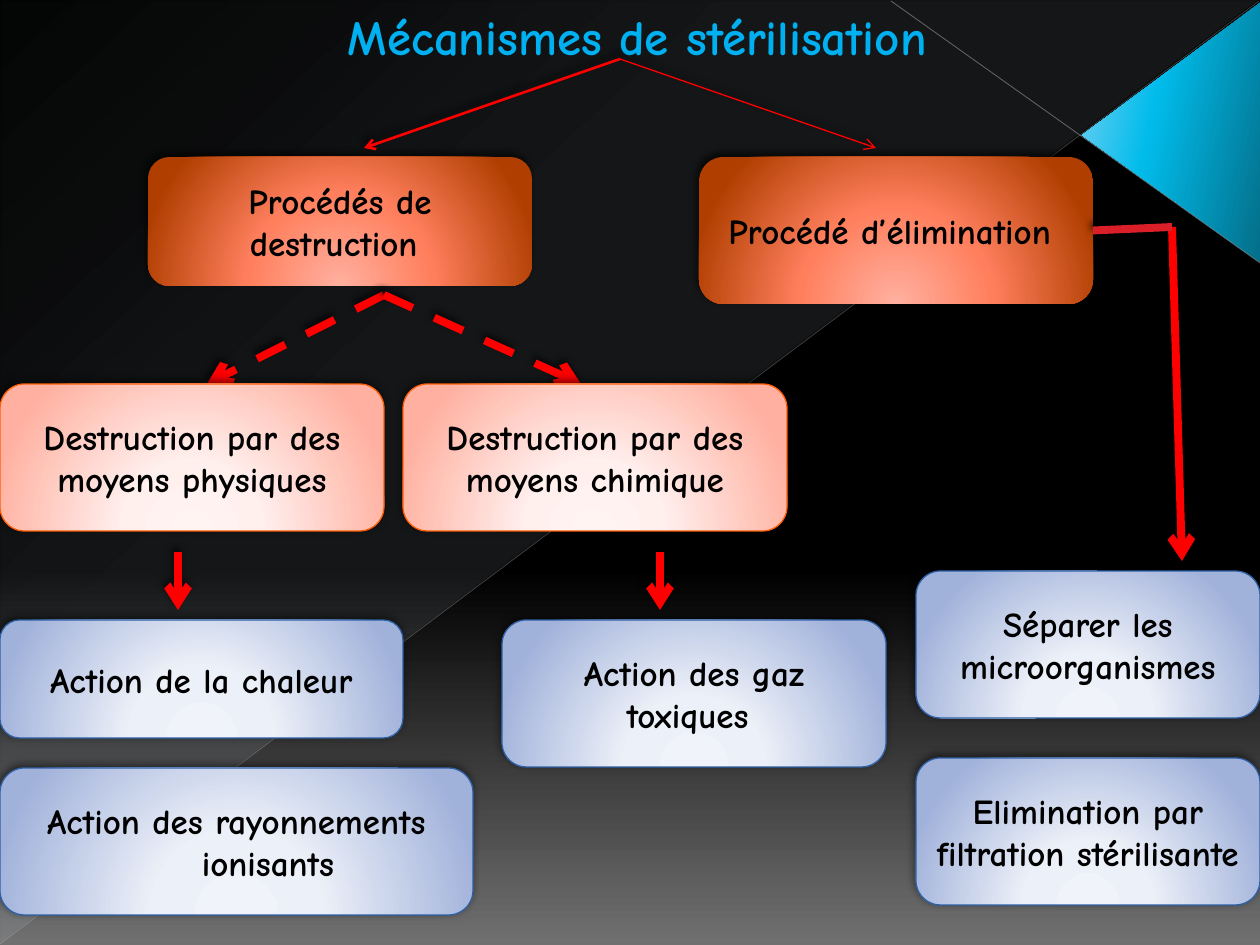
from lxml.etree import SubElement
from pptx import Presentation
from pptx.dml.color import RGBColor
from pptx.enum.dml import MSO_LINE_DASH_STYLE as Dash
from pptx.enum.shapes import MSO_CONNECTOR as Link, MSO_SHAPE as Preset
from pptx.enum.text import MSO_ANCHOR as Anchor, MSO_AUTO_SIZE as AutoSize, PP_ALIGN as Align
from pptx.oxml.ns import qn
from pptx.util import Emu, Pt

PX_PER_INCH = 126
RED = "FF0000"

# Each theme: gradient stops, outline colour, shadow (opacity, blur, distance)
ORANGE = ([(0, "FFB0A0"), (46, "FF7F5D"), (100, "B03E00")], None, (60, 4, 3))
PINK = ([(0, "FFF4F2"), (34, "FFEFED"), (100, "FFB0A0")], "FF5E07", (50, 5, 2))
BLUE = ([(0, "F1F3FB"), (34, "ECF0F8"), (100, "A0B1DA")], "2F61A7", (50, 5, 2))


def px(value):
    return Emu(round(value * 914400 / PX_PER_INCH))


def rgb(hex_code):
    return RGBColor.from_string(hex_code)


def add_node(parent, tag, **attributes):
    return SubElement(parent, qn(tag), {key: str(value) for key, value in attributes.items()})


def add_color(parent, hex_code, opacity=100):
    color = add_node(parent, "a:srgbClr", val=hex_code)
    if opacity < 100:
        add_node(color, "a:alpha", val=opacity * 1000)


def set_gradient(fill, properties, stops, angle=None):
    """Fill with (position, colour[, opacity]) stops: linear at an angle, else radial."""
    fill.solid()
    solid = properties.find(qn("a:solidFill"))
    gradient = add_node(properties, "a:gradFill", rotWithShape=1)
    properties.replace(solid, gradient)
    stop_list = add_node(gradient, "a:gsLst")
    for position, *color in stops:
        add_color(add_node(stop_list, "a:gs", pos=position * 1000), *color)
    if angle is None:
        circle = add_node(gradient, "a:path", path="circle")
        add_node(circle, "a:fillToRect", l=50000, t=155000, r=50000, b=-55000)
    else:
        add_node(gradient, "a:lin", ang=angle * 60000, scaled=0)


def set_shadow(item, shadow=None):
    effects = add_node(item.element.spPr, "a:effectLst")
    if shadow:
        opacity, blur, distance = shadow
        outer = add_node(effects, "a:outerShdw", blurRad=Pt(blur), dist=Pt(distance),
                         dir=245 * 60000, rotWithShape=0)
        add_color(outer, "000000", opacity)


def write(shape, text, size=20, color="000000", align=Align.CENTER,
          anchor=Anchor.MIDDLE, wrap=True, hanging=0):
    frame = shape.text_frame
    frame.word_wrap = wrap
    frame.vertical_anchor = anchor
    paragraph = frame.paragraphs[0]
    paragraph.alignment = align
    if hanging:
        properties = paragraph._p.get_or_add_pPr()
        properties.set("marL", str(px(hanging)))
        properties.set("indent", str(-px(hanging)))
    run = paragraph.add_run()
    run.text = text
    run.font.name = "Comic Neue"
    run.font.size = Pt(size)
    run.font.bold = True
    run.font.color.rgb = rgb(color)


def add_box(slide, theme, text, left, top, width, height=147, hanging=0):
    stops, outline, shadow = theme
    box = slide.shapes.add_shape(Preset.ROUNDED_RECTANGLE, *map(px, (left, top, width, height)))
    set_gradient(box.fill, box.element.spPr, stops)
    if outline:
        box.line.color.rgb = rgb(outline)
        box.line.width = Pt(0.75)
    else:
        box.line.fill.background()
    set_shadow(box, shadow)
    write(box, text, hanging=hanging)
    return box


def add_line(slide, start, end, color=RED, width=4.5, dash=None, arrow=True,
             opacity=100, shadow=(60, 4, 3)):
    line = slide.shapes.add_connector(Link.STRAIGHT, *map(px, (*start, *end)))
    line.line.color.rgb = rgb(color)
    line.line.width = Pt(width)
    if dash:
        line.line.dash_style = dash
    outline = line.element.spPr.find(qn("a:ln"))
    if opacity < 100:
        add_node(outline.find(".//" + qn("a:srgbClr")), "a:alpha", val=opacity * 1000)
    if arrow:
        add_node(outline, "a:tailEnd", type="arrow")
    set_shadow(line, shadow)
    return line


def add_triangle(slide, preset, bounds, stops, angle, rotation=0):
    triangle = slide.shapes.add_shape(preset, *map(px, bounds))
    triangle.rotation = rotation
    triangle.element.spPr.find(qn("a:xfrm")).set("flipV", "1")
    set_gradient(triangle.fill, triangle.element.spPr, stops, angle)
    triangle.line.fill.background()
    set_shadow(triangle)
    return triangle


def add_backdrop(slide):
    fill = slide.background.fill
    fill.solid()
    set_gradient(fill, slide.element.find(".//" + qn("p:bgPr")),
                 [(0, "000000"), (60, "000000"), (100, "707070")], 90)
    add_triangle(slide, Preset.RIGHT_TRIANGLE, (1, 1, 1258, 943),
                 [(0, "DEF5FA", 10), (70, "DEF5FA", 8), (100, "DEF5FA", 1)], 133)
    corner = add_triangle(slide, Preset.ISOSCELES_TRIANGLE, (1041, 43, 261, 179),
                          [(0, "036E89"), (60, "01BCEB"), (100, "7CD1F2")], 258, rotation=90)
    corner.adjustments[0] = 0.51
    add_line(slide, (1260, 263), (891, 1), "C1C1C1", 0.47, arrow=False, opacity=45, shadow=None)
    add_line(slide, (0, 944), (1259, 1), "B9B9B9", 0.39, arrow=False, opacity=35, shadow=None)


def place_title(slide):
    title = slide.shapes.title
    title.left, title.top, title.width, title.height = map(px, (335, 0, 706, 72))
    write(title, "Mécanismes de stérilisation", size=28, color="00B0F0",
          align=Align.LEFT, anchor=Anchor.TOP, wrap=False)
    title.text_frame.auto_size = AutoSize.SHAPE_TO_FIT_TEXT
    title.element.getparent().append(title.element)  # in front of the backdrop


def main():
    deck = Presentation()
    deck.slide_width, deck.slide_height = px(1260), px(945)
    slide = deck.slides.add_slide(deck.slide_layouts[5])
    add_backdrop(slide)
    place_title(slide)

    add_box(slide, ORANGE, "Procédés de destruction ", 148, 157, 384, 129)
    elimination = add_box(slide, ORANGE, "Procédé d’élimination ", 699, 157, 394)

    destruction_fork = (384, 295)
    for tip in ((207, 384), (581, 384)):
        add_line(slide, destruction_fork, tip, dash=Dash.DASH)

    add_box(slide, PINK, "Destruction par des moyens physiques", 0, 384, 384)
    add_box(slide, PINK, "Destruction par des moyens chimique", 403, 384, 384)
    add_box(slide, BLUE, "Action de la chaleur", 0, 620, 403, 118, hanging=63)
    add_box(slide, BLUE, "Action des gaz toxiques ", 502, 620, 384)

    for center in (178, 660):
        add_line(slide, (center, 552), (center, 610))
    title_fork = (620, 59)
    add_line(slide, title_fork, (364, 148), width=1.5)
    add_line(slide, title_fork, (876, 148), width=0.75)

    elbow = (1172, 227)
    add_line(slide, elbow, (1182, 561))
    exit_line = add_line(slide, (1093, 231), elbow, "DA1F28", arrow=False)
    exit_line.begin_connect(elimination, 3)

    add_box(slide, BLUE, "Séparer les microorganismes", 916, 571, 344)
    add_box(slide, BLUE, "Elimination par filtration stérilisante", 916, 758, 344)
    add_box(slide, BLUE, "Action des rayonnements ionisants", 0, 768, 473, hanging=63)

    deck.save("out.pptx")


if __name__ == "__main__":
    main()
